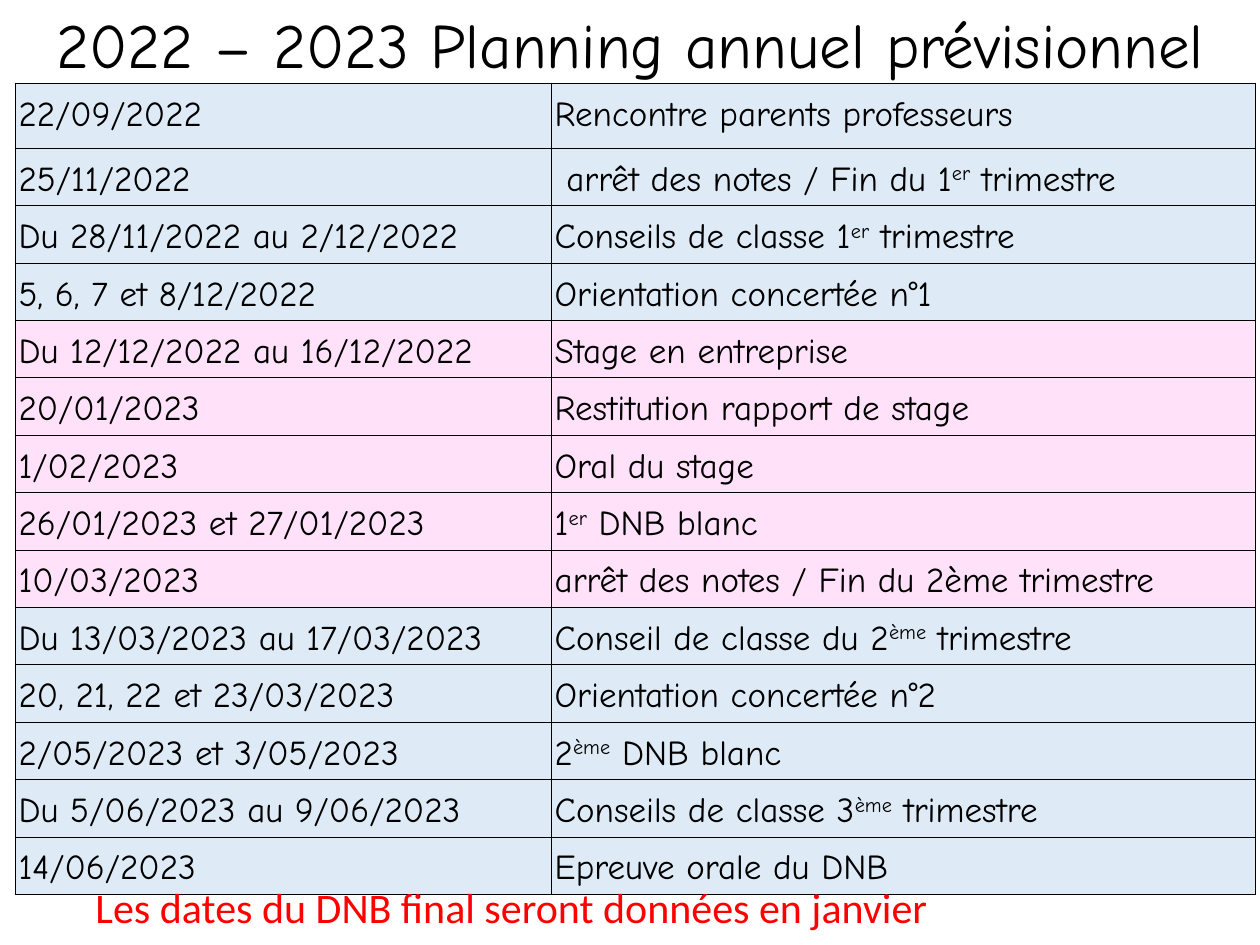
from lxml import etree
from pptx import Presentation
from pptx.dml.color import RGBColor
from pptx.enum.text import MSO_ANCHOR, MSO_AUTO_SIZE, PP_ALIGN
from pptx.oxml.ns import qn
from pptx.util import Pt

TOP = MSO_ANCHOR.TOP
GROW = MSO_AUTO_SIZE.SHAPE_TO_FIT_TEXT
CENTER = PP_ALIGN.CENTER

BLACK = RGBColor(0x00, 0x00, 0x00)
RED = RGBColor(0xFF, 0x00, 0x00)
BLUE = RGBColor(0xDE, 0xEB, 0xF7)
PINK = RGBColor(0xFF, 0xE1, 0xF9)

HAND_FONT = "Comic Neue"
NOTE_FONT = "Calibri"
TITLE_ONLY = 5
CELL_INSET = Pt(2)
FIRST_ROW_HEIGHT = Pt(37.2)
SUPERSCRIPT_MARK = "^"

TITLE = "2022 – 2023 Planning annuel prévisionnel"
NOTE = "Les dates du DNB final seront données en janvier"
EVENTS = [
    ("22/09/2022", "Rencontre parents professeurs", BLUE),
    ("25/11/2022", " arrêt des notes / Fin du 1^er^ trimestre", BLUE),
    ("Du 28/11/2022 au 2/12/2022", "Conseils de classe 1^er^ trimestre", BLUE),
    ("5, 6, 7 et 8/12/2022", "Orientation concertée n°1", BLUE),
    ("Du 12/12/2022 au 16/12/2022", "Stage en entreprise", PINK),
    ("20/01/2023", "Restitution rapport de stage", PINK),
    ("1/02/2023", "Oral du stage", PINK),
    ("26/01/2023 et 27/01/2023", "1^er^ DNB blanc", PINK),
    ("10/03/2023", "arrêt des notes / Fin du 2ème trimestre", PINK),
    ("Du 13/03/2023 au 17/03/2023", "Conseil de classe du 2^ème^ trimestre", BLUE),
    ("20, 21, 22 et 23/03/2023", "Orientation concertée n°2", BLUE),
    ("2/05/2023 et 3/05/2023", "2^ème^ DNB blanc", BLUE),
    ("Du 5/06/2023 au 9/06/2023", "Conseils de classe 3^ème^ trimestre", BLUE),
    ("14/06/2023", "Epreuve orale du DNB", BLUE),
]


def set_font(paragraph, name, size, color):
    font = paragraph.font
    font.name, font.size = name, size
    font.color.rgb = color


def add_borders(cell):
    properties = cell._tc.get_or_add_tcPr()
    for position, side in enumerate(("a:lnL", "a:lnR", "a:lnT", "a:lnB")):
        line = etree.Element(qn(side), w=str(Pt(0.6)))
        fill = etree.SubElement(line, qn("a:solidFill"))
        etree.SubElement(fill, qn("a:srgbClr"), val=str(BLACK))
        properties.insert(position, line)


def fill_cell(cell, text, color):
    cell.margin_left = cell.margin_right = CELL_INSET
    cell.margin_top = cell.margin_bottom = CELL_INSET
    cell.fill.solid()
    cell.fill.fore_color.rgb = color
    add_borders(cell)
    paragraph = cell.text_frame.paragraphs[0]
    paragraph.line_spacing = 1.2
    set_font(paragraph, HAND_FONT, Pt(20), BLACK)
    for position, part in enumerate(text.split(SUPERSCRIPT_MARK)):
        run = paragraph.add_run()
        run.text = part
        if position % 2:
            run.font._element.set("baseline", "30000")


def add_planning(slide, left, top, width, height):
    frame = slide.shapes.add_table(len(EVENTS), 2, left, top, width, height)
    table = frame.table
    table.first_row = table.horz_banding = False
    date_width = Pt(306.4)
    table.columns[0].width = date_width
    table.columns[1].width = width - date_width
    row_height = (height - FIRST_ROW_HEIGHT) // (len(EVENTS) - 1)
    for row, (date, event, color) in zip(table.rows, EVENTS):
        row.height = row_height
        fill_cell(row.cells[0], date, color)
        fill_cell(row.cells[1], event, color)
    table.rows[0].height = FIRST_ROW_HEIGHT


def place_title(slide, left, top, width, height):
    title = slide.shapes.title
    title.left, title.top, title.width, title.height = left, top, width, height
    text_frame = title.text_frame
    text_frame.text = TITLE
    text_frame.word_wrap = True
    text_frame.auto_size = GROW
    text_frame.vertical_anchor = TOP
    text_frame.margin_top = text_frame.margin_bottom = 0
    paragraph = text_frame.paragraphs[0]
    paragraph.alignment = CENTER
    paragraph.line_spacing = 1
    set_font(paragraph, HAND_FONT, Pt(36), BLACK)


def add_note(slide, left, top, width, height):
    text_frame = slide.shapes.add_textbox(left, top, width, height).text_frame
    text_frame.text = NOTE
    text_frame.word_wrap = False
    text_frame.auto_size = GROW
    set_font(text_frame.paragraphs[0], NOTE_FONT, Pt(24), RED)


def main():
    presentation = Presentation()
    presentation.slide_width, presentation.slide_height = Pt(720), Pt(540)
    slide = presentation.slides.add_slide(presentation.slide_layouts[TITLE_ONLY])
    place_title(slide, Pt(0), Pt(3), Pt(720), Pt(42))
    add_planning(slide, Pt(8.6), Pt(47.5), Pt(708.8), Pt(448))
    add_note(slide, Pt(47.5), Pt(500), Pt(494.6), Pt(36))
    presentation.save("out.pptx")


if __name__ == "__main__":
    main()
